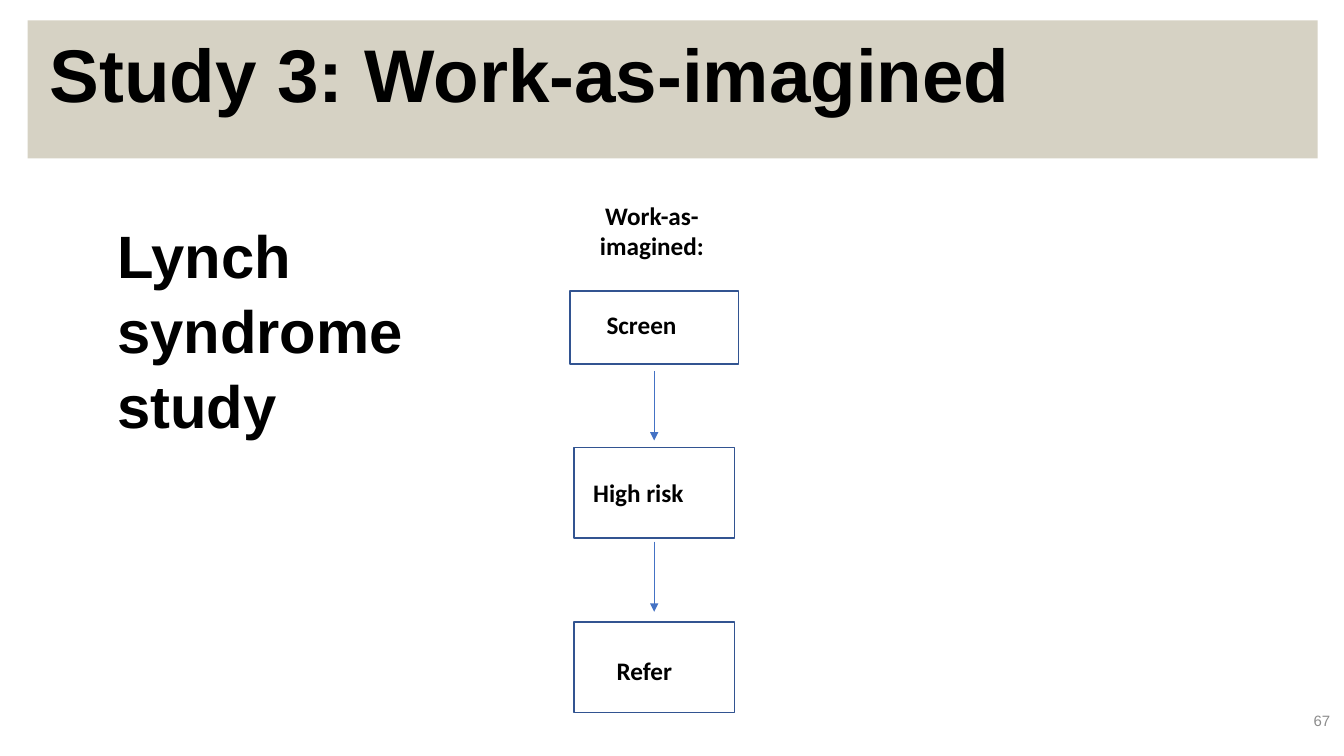
from dataclasses import dataclass
from typing import Any

from lxml import etree
from pptx import Presentation
from pptx.dml.color import RGBColor
from pptx.enum.shapes import MSO_CONNECTOR, MSO_SHAPE
from pptx.enum.text import MSO_ANCHOR, PP_ALIGN
from pptx.oxml.ns import qn
from pptx.util import Pt

RECT = MSO_SHAPE.RECTANGLE
STRAIGHT = MSO_CONNECTOR.STRAIGHT
TOP, MIDDLE, BOTTOM = MSO_ANCHOR.TOP, MSO_ANCHOR.MIDDLE, MSO_ANCHOR.BOTTOM
LEFT, CENTER, RIGHT = PP_ALIGN.LEFT, PP_ALIGN.CENTER, PP_ALIGN.RIGHT

BLACK = RGBColor(0x00, 0x00, 0x00)
GREY = RGBColor(0x8C, 0x8C, 0x8C)
BEIGE = RGBColor(0xD6, 0xD2, 0xC4)
NAVY = RGBColor(0x32, 0x54, 0x91)
BLUE = RGBColor(0x44, 0x72, 0xC4)

FLOW_X = 467.3


@dataclass
class Box:
    left: float
    top: float
    width: float
    height: float


@dataclass
class Style:
    font: dict[str, Any]
    color: RGBColor = BLACK
    align: PP_ALIGN = LEFT
    anchor: MSO_ANCHOR = TOP
    inset: tuple[float, float] = (7.2, 3.6)
    spacing: float = 1.0


@dataclass
class Label:
    text: str
    box: Box
    style: Style


@dataclass
class Step:
    top: float
    width: float
    height: float
    label: Label


@dataclass
class Arrow:
    top: float
    bottom: float


WIDE = (9.6, 4.8)
FLOW_FONT = {"name": "Calibri", "size": Pt(18), "bold": True}
FLOW = Style(FLOW_FONT)
CAPTION = Style(FLOW_FONT, align=CENTER)
TITLE = Style({"name": "Arial", "size": Pt(53.3), "bold": True},
              align=CENTER, anchor=BOTTOM, inset=WIDE)
TOPIC = Style({"name": "Arial", "size": Pt(42.7), "bold": True},
              anchor=BOTTOM, inset=WIDE, spacing=1.05)
NUMBER = Style({"name": "Arial", "size": Pt(10.7), "bold": False},
               color=GREY, align=RIGHT, anchor=MIDDLE, inset=WIDE)

BANNER = Box(19.7, 14.5, 921.6, 98.6)
STEPS = [
    Step(208, 120.4, 52, Label("Screen", Box(426.2, 217.4, 81.4, 29), FLOW)),
    Step(319.8, 114.4, 64.6, Label("High risk", Box(416.6, 337.6, 100.8, 29), FLOW)),
    Step(444.4, 114.4, 64.6, Label("Refer", Box(433.4, 464.4, 65.5, 29), FLOW)),
]
ARROWS = [Arrow(265, 314.6), Arrow(386.8, 437)]
LABELS = [
    Label("Work-as-imagined:", Box(405.5, 139.7, 120.4, 51), CAPTION),
    Label("Study 3: Work-as-imagined", Box(-51, 4.3, 859, 84.3), TITLE),
    Label("67", Box(735.8, 500.4, 224, 29), NUMBER),
    Label("Lynch syndrome study", Box(74.2, 157.7, 275.8, 162), TOPIC),
]


def add_rect(shapes: Any, box: Box, fill: RGBColor | None, line: RGBColor | None) -> None:
    sp = shapes.add_shape(RECT, Pt(box.left), Pt(box.top), Pt(box.width), Pt(box.height))
    sp.shadow.inherit = False
    if fill is None:
        sp.fill.background()
    else:
        sp.fill.solid()
        sp.fill.fore_color.rgb = fill
    if line is None:
        sp.line.fill.background()
    else:
        sp.line.color.rgb = line
        sp.line.width = Pt(1)


def add_label(shapes: Any, label: Label) -> None:
    box, style = label.box, label.style
    sp = shapes.add_textbox(Pt(box.left), Pt(box.top), Pt(box.width), Pt(box.height))
    tf = sp.text_frame
    side, end = (Pt(v) for v in style.inset)
    frame = {"word_wrap": True, "vertical_anchor": style.anchor,
             "margin_left": side, "margin_right": side,
             "margin_top": end, "margin_bottom": end}
    for name, value in frame.items():
        setattr(tf, name, value)
    p = tf.paragraphs[0]
    p.alignment = style.align
    p.line_spacing = style.spacing
    r = p.add_run()
    r.text = label.text
    for name, value in style.font.items():
        setattr(r.font, name, value)
    r.font.color.rgb = style.color


def add_arrow(shapes: Any, arrow: Arrow) -> None:
    cxn = shapes.add_connector(STRAIGHT, Pt(FLOW_X), Pt(arrow.top), Pt(FLOW_X), Pt(arrow.bottom))
    cxn.line.color.rgb = BLUE
    cxn.line.width = Pt(0.5)
    sp_pr = cxn.line._get_or_add_ln().getparent()
    etree.SubElement(sp_pr.find(qn("a:ln")), qn("a:tailEnd"), type="triangle")
    etree.SubElement(sp_pr, qn("a:effectLst"))


def main() -> None:
    prs = Presentation()
    prs.slide_width, prs.slide_height = Pt(960), Pt(540)
    shapes = prs.slides.add_slide(prs.slide_layouts[6]).shapes
    add_rect(shapes, BANNER, BEIGE, None)
    for step in STEPS:
        box = Box(FLOW_X - step.width / 2, step.top, step.width, step.height)
        add_rect(shapes, box, None, NAVY)
        add_label(shapes, step.label)
    for arrow in ARROWS:
        add_arrow(shapes, arrow)
    for label in LABELS:
        add_label(shapes, label)
    prs.save("out.pptx")


if __name__ == "__main__":
    main()
